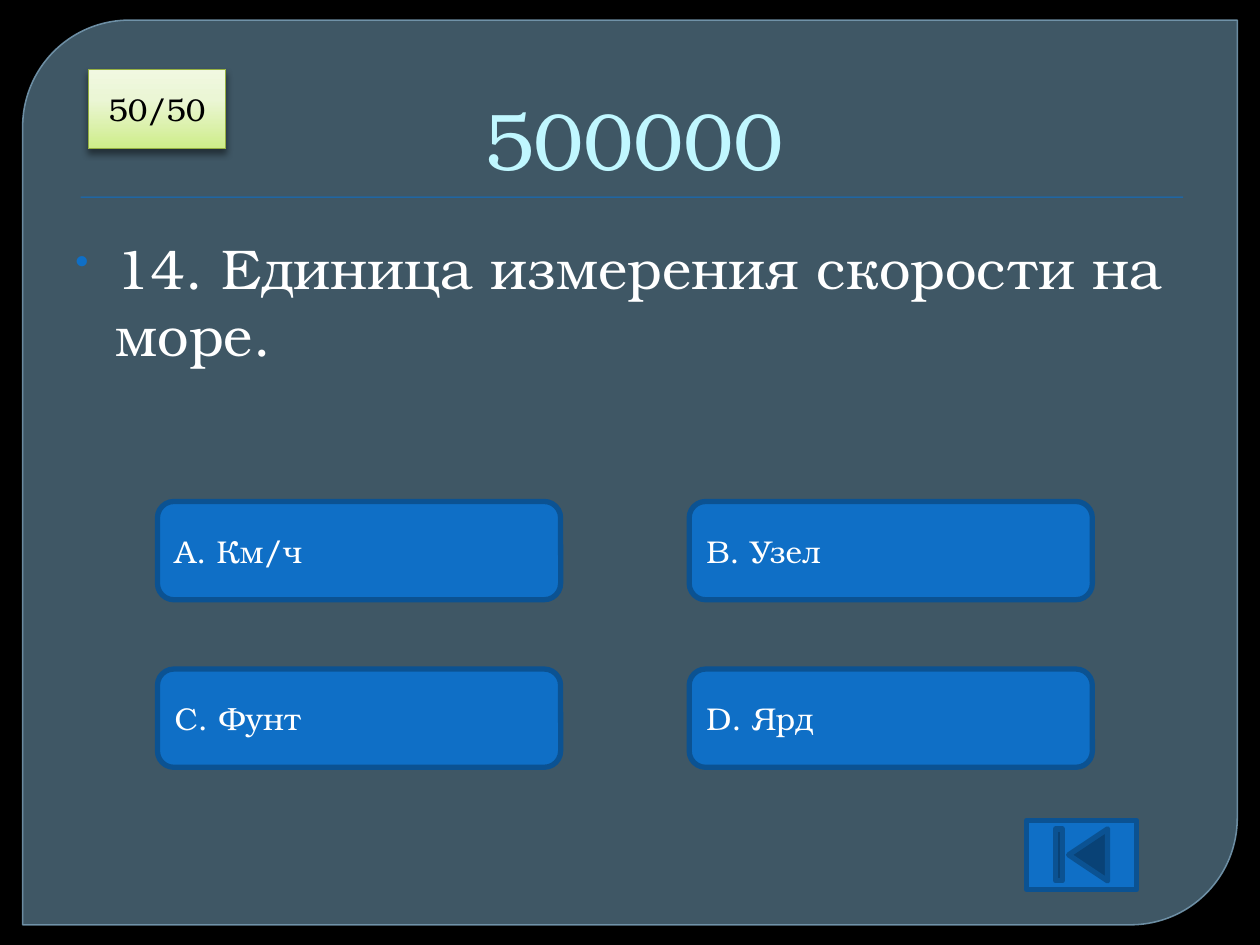
from itertools import product

from lxml.etree import SubElement
from pptx import Presentation
from pptx.dml.color import RGBColor
from pptx.enum.shapes import MSO_SHAPE as Shape
from pptx.enum.text import MSO_ANCHOR as Anchor, PP_ALIGN as Align
from pptx.oxml.ns import qn
from pptx.util import Inches, Pt

FONT = "TeX Gyre Bonum"
COLORS = {
    "background": "000000", "panel": "61869C", "panel_line": "779BB2",
    "blue": "0F6FC6", "dark_blue": "0B5292", "title": "C0F7FF",
    "white": "FFFFFF", "black": "000000", "green_line": "96B042",
}
GREEN_STOPS = [(0, "CEED89"), (62, "EBF6D5"), (100, "F1F8E1")]
ANSWERS = ["A. Км/ч", "B. Узел", "C. Фунт", "D. Ярд"]
GRID_LEFT, GRID_TOP, COLUMN_STEP, ROW_STEP = 1.25, 3.98, 4.22, 1.33


def color(name):
    """Return the named colour."""
    return RGBColor.from_string(COLORS[name])


def add(parent, tag, **attributes):
    """Append a drawing element with the given attributes."""
    return SubElement(parent, qn(tag), {key: str(value) for key, value in attributes.items()})


def set_opacity(fill, percent):
    """Make a solid fill partly transparent."""
    add(fill._xPr.find(".//" + qn("a:srgbClr")), "a:alpha", val=percent * 1000)


def add_box(slide, kind, box, fill="blue", line="dark_blue", width=3):
    """Draw a preset shape with a flat fill and an optional outline."""
    shape = slide.shapes.add_shape(kind, *map(Inches, box))
    shape.shadow.inherit = False
    shape.fill.solid()
    shape.fill.fore_color.rgb = color(fill)
    if line:
        shape.line.color.rgb = color(line)
        shape.line.width = Pt(width)
    else:
        shape.line.fill.background()
    return shape


def add_shadow(shape, opacity, blur, distance):
    """Cast a black shadow straight down."""
    effects = shape._element.spPr.find(qn("a:effectLst"))
    shadow = add(effects, "a:outerShdw", blurRad=Pt(blur), dist=Pt(distance),
                 dir=90 * 60000, algn="ctr", rotWithShape=0)
    black = add(shadow, "a:srgbClr", val=COLORS["black"])
    add(black, "a:alpha", val=opacity * 1000)


def set_gradient(shape, stops):
    """Fill a shape with a gradient that runs from bottom to top."""
    shape.fill.gradient()
    shape.fill.gradient_angle = 90
    stop_list = shape._element.spPr.find(".//" + qn("a:gsLst"))
    stop_list.clear()
    for position, value in stops:
        add(add(stop_list, "a:gs", pos=position * 1000), "a:srgbClr", val=value)


def write(shape, text, size=18, fill="white", align=Align.LEFT, anchor=Anchor.MIDDLE):
    """Write one formatted paragraph into a shape and return it."""
    frame = shape.text_frame
    frame.word_wrap = True
    frame.vertical_anchor = anchor
    paragraph = frame.paragraphs[0]
    paragraph.alignment = align
    run = paragraph.add_run()
    run.text = text
    run.font.name = FONT
    run.font.size = Pt(size)
    run.font.color.rgb = color(fill)
    return paragraph


def add_text(slide, box, text, **format):
    """Add a text box with one formatted paragraph."""
    return write(slide.shapes.add_textbox(*map(Inches, box)), text, **format)


def set_bullet(paragraph, indent):
    """Give a paragraph a small blue bullet and a hanging indent."""
    properties = paragraph._p.get_or_add_pPr()
    properties.set("marL", str(Inches(indent)))
    properties.set("indent", str(-Inches(indent)))
    add(add(properties, "a:buClr"), "a:srgbClr", val=COLORS["blue"])
    add(properties, "a:buSzPct", val=70000)
    add(properties, "a:buChar", char="•")


def add_frame(slide):
    """Draw the background panel and the rule under the title."""
    slide.background.fill.solid()
    slide.background.fill.fore_color.rgb = color("background")
    panel = add_box(slide, Shape.ROUND_2_DIAG_RECTANGLE, (0.18, 0.16, 9.64, 7.18),
                    "panel", "panel_line", 0.87)
    panel.adjustments[0], panel.adjustments[1] = 0.118, 0
    set_opacity(panel.fill, 65)
    set_opacity(panel.line.fill, 88)
    rule = add_box(slide, Shape.RECTANGLE, (0.64, 1.56, 8.75, 0.01), line=None)
    add_shadow(rule, 75, 1, 1)


def add_answers(slide):
    """Lay the answers out in two rows of two."""
    for text, (row, column) in zip(ANSWERS, product(range(2), repeat=2)):
        box = (GRID_LEFT + column * COLUMN_STEP, GRID_TOP + row * ROW_STEP, 3.2, 0.78)
        write(add_box(slide, Shape.ROUNDED_RECTANGLE, box), text)


def add_hint(slide):
    """Add the green hint button."""
    hint = add_box(slide, Shape.ACTION_BUTTON_CUSTOM, (0.7, 0.55, 1.09, 0.63),
                   line="green_line", width=0.75)
    set_gradient(hint, GREEN_STOPS)
    add_shadow(hint, 43, 4, 3)
    write(hint, "50/50", fill="black", align=Align.CENTER)


def main():
    """Build and save the quiz slide."""
    presentation = Presentation()
    presentation.slide_width, presentation.slide_height = Inches(10), Inches(7.5)
    slide = presentation.slides.add_slide(presentation.slide_layouts[6])
    add_frame(slide)
    title = add_text(slide, (0.5, 0.28, 9, 1.25), "500000", size=46, fill="title",
                     align=Align.CENTER, anchor=Anchor.BOTTOM)
    title._p.get_or_add_pPr().set("marL", str(Inches(0.06)))
    question = add_text(slide, (0.5, 1.8, 9, 4.95), "14. Единица измерения скорости на море.",
                        size=32, anchor=Anchor.TOP)
    set_bullet(question, 0.32)
    add_answers(slide)
    add_hint(slide)
    add_box(slide, Shape.ACTION_BUTTON_BEGINNING, (8.15, 6.51, 0.87, 0.55))
    presentation.save("out.pptx")


if __name__ == "__main__":
    main()
